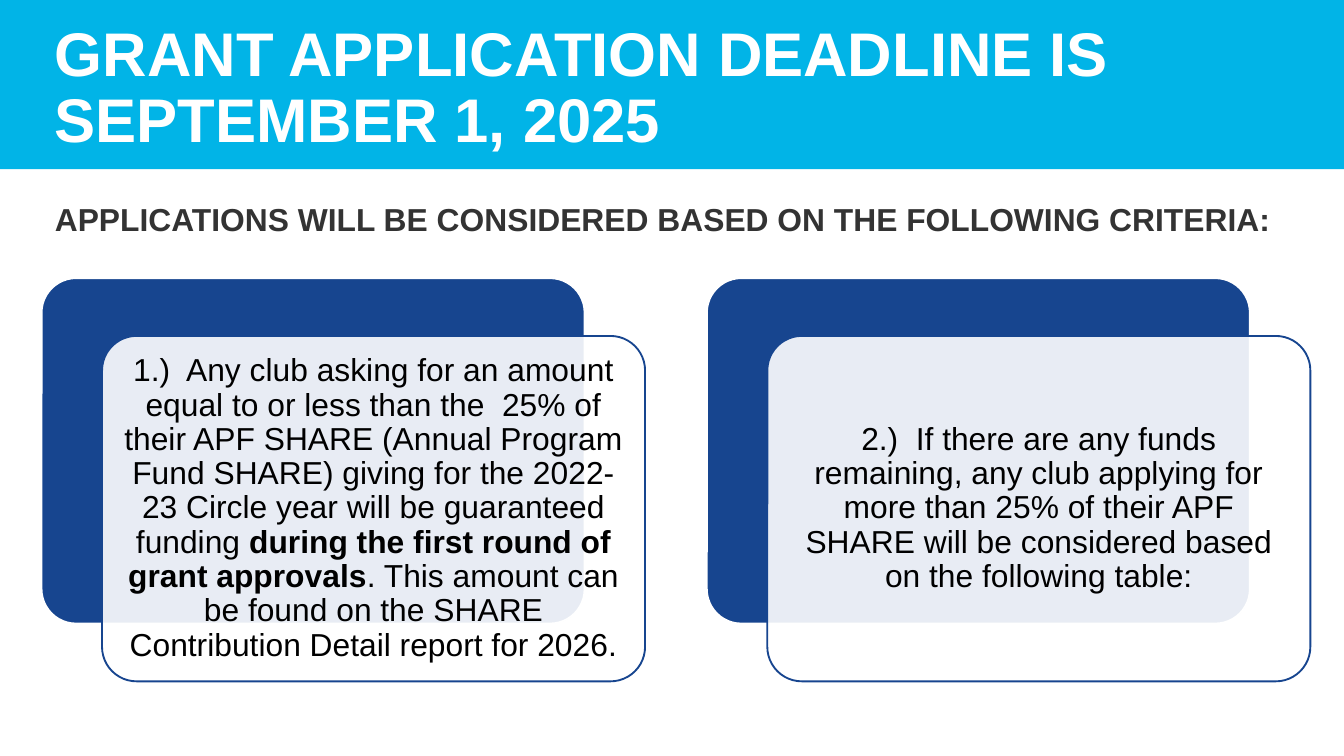
from lxml.etree import SubElement
from pptx import Presentation
from pptx.dml.color import RGBColor
from pptx.enum.shapes import MSO_SHAPE as Shape
from pptx.enum.text import MSO_ANCHOR as Anchor, PP_ALIGN as Align
from pptx.oxml.ns import qn
from pptx.util import Inches, Pt

SKY, NAVY, WHITE, GREY, BLACK = "01B4E7", "17458F", "FFFFFF", "333333", "000000"


def color(code):
    return RGBColor.from_string(code)


class Deck:
    """Holds the style and the current slide, and draws its elements."""

    font = "Arial"
    spacing = 0.9
    round = 0.1

    def __init__(self, width, height):
        self.prs = Presentation()
        self.prs.slide_width = Inches(width)
        self.prs.slide_height = Inches(height)
        self.slide = self.prs.slides.add_slide(self.prs.slide_layouts[6])

    def block(self, kind, box, fill, line=None, alpha=None):
        shape = self.slide.shapes.add_shape(kind, *map(Inches, box))
        shape.shadow.inherit = False
        shape.fill.solid()
        shape.fill.fore_color.rgb = color(fill)
        if kind == Shape.ROUNDED_RECTANGLE:
            shape.adjustments[0] = self.round
        if line:
            shape.line.color.rgb = color(line)
            shape.line.width = Pt(1)
        else:
            shape.line.fill.background()
        if alpha:
            tint = shape._element.spPr.find(qn("a:solidFill")).find(qn("a:srgbClr"))
            SubElement(tint, qn("a:alpha")).set("val", str(alpha * 1000))

    def text(self, box, parts, size, ink, pad, anchor=Anchor.TOP, align=Align.LEFT, after=0):
        frame = self.slide.shapes.add_textbox(*map(Inches, box)).text_frame
        frame.word_wrap = True
        frame.vertical_anchor = anchor
        frame.margin_left = frame.margin_right = Inches(pad[0])
        frame.margin_top = frame.margin_bottom = Inches(pad[1])
        para = frame.paragraphs[0]
        para.alignment = align
        para.line_spacing = self.spacing
        para.space_after = Pt(after)
        for words, bold in parts:
            run = para.add_run()
            run.text = words
            run.font.name = self.font
            run.font.size = Pt(size)
            run.font.bold = bold
            run.font.color.rgb = color(ink)

    def card(self, left, top, parts):
        width, height, inset = 4.04, 2.57, 0.08
        self.block(Shape.ROUNDED_RECTANGLE, (left, top, width, height), NAVY, WHITE)
        left, top = left + 0.45, top + 0.43
        self.block(Shape.ROUNDED_RECTANGLE, (left, top, width, height), WHITE, NAVY, 90)
        inner = (left + inset, top + inset, width - 2 * inset, height - 2 * inset)
        self.text(inner, parts, 17, BLACK, (0.07, 0.07), Anchor.MIDDLE, Align.CENTER, 6)


def main():
    deck = Deck(10, 10 * 9 / 16)
    deck.block(Shape.RECTANGLE, (0, 0, 10, 1.26), SKY)
    title = [("GRANT APPLICATION DEADLINE IS SEPTEMBER 1, 2025", True)]
    deck.text((0.31, 0, 9.44, 1.26), title, 33, WHITE, (0.1, 0.1), Anchor.BOTTOM)
    lead = [("APPLICATIONS WILL BE CONSIDERED BASED ON THE FOLLOWING CRITERIA:", True)]
    deck.text((0.31, 1.47, 9.44, 0.5), lead, 17, GREY, (0.1, 0.05))

    rules = [
        [
            ("1.)  Any club asking for an amount equal to or less than the  25% of their "
             "APF SHARE (Annual Program Fund SHARE) giving for the 2022-23 Circle year "
             "will be guaranteed funding ", False),
            ("during the first round of grant approvals", True),
            (". This amount can be found on the SHARE Contribution Detail report "
             "for 2026.", False),
        ],
        [
            ("2.)  If there are any funds remaining, any club applying for more than 25% "
             "of their APF SHARE will be considered based on the following table:", False),
        ],
    ]
    for i, parts in enumerate(rules):
        deck.card(0.31 + i * 4.95, 2.07, parts)
    deck.prs.save("out.pptx")


if __name__ == "__main__":
    main()
